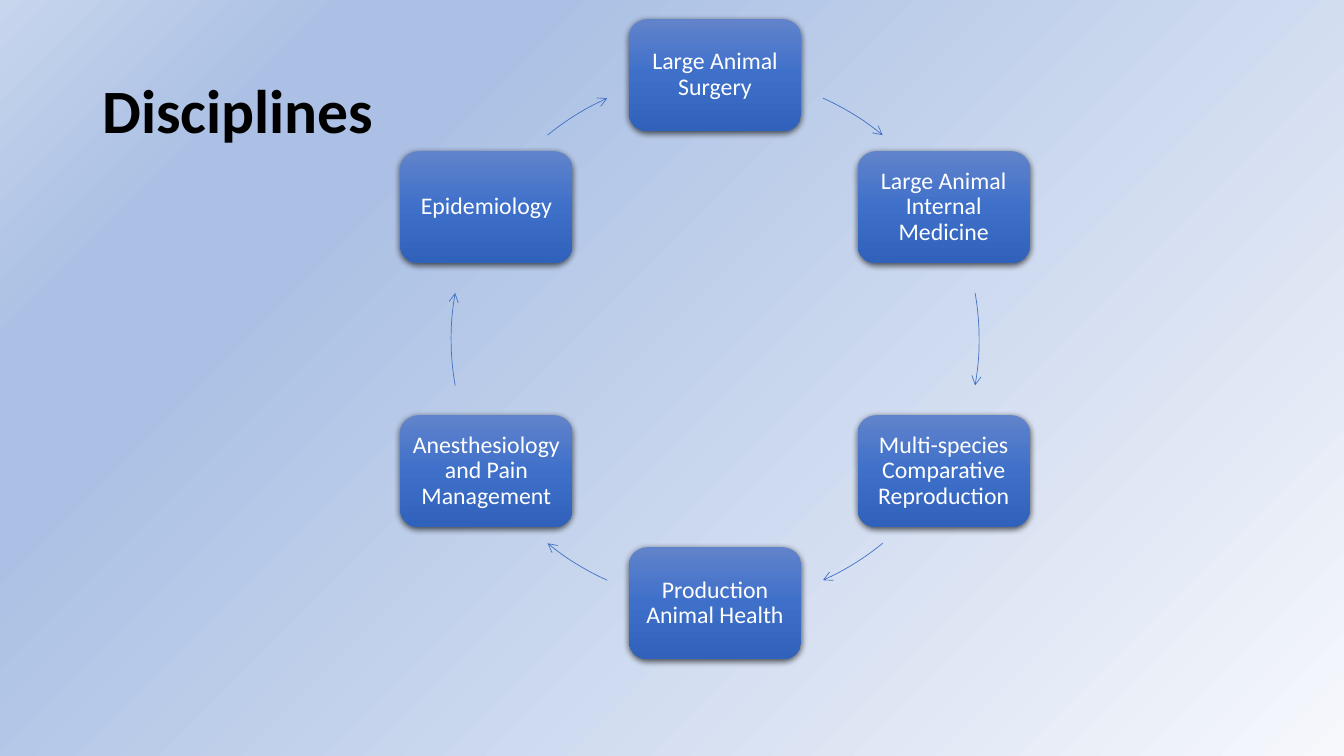
"""Builds the Disciplines slide: six disciplines linked in a clockwise cycle."""
from math import cos, radians, sin

from lxml import etree
from pptx import Presentation
from pptx.dml.color import RGBColor
from pptx.enum.shapes import MSO_SHAPE
from pptx.enum.text import MSO_ANCHOR, PP_ALIGN
from pptx.oxml import parse_xml
from pptx.oxml.ns import nsdecls, qn
from pptx.util import Pt

ROUNDED, ARC = MSO_SHAPE.ROUNDED_RECTANGLE, MSO_SHAPE.ARC
MIDDLE, LEFT, CENTER = MSO_ANCHOR.MIDDLE, PP_ALIGN.LEFT, PP_ALIGN.CENTER

COLORS = {
    "pale": "F6F8FC", "sky": "ABC0E4", "mist": "C7D5ED",
    "top": "6183CB", "mid": "3E70CA", "base": "3062BB",
    "arrow": "4472C4", "black": "000000", "white": "FFFFFF",
}
TITLE = {"size": Pt(44), "bold": True, "name": "Calibri"}
LABEL = {"size": Pt(17), "bold": False, "name": "Calibri"}

CX, CY, RADIUS = 510.8, 242.3, 188.6
BOX_W, BOX_H = 123.2, 80
CYCLE = [
    ("Large Animal Surgery", 294.1, 309.4),
    ("Large Animal Internal Medicine", 349.9, 10.1),
    ("Multi-species Comparative Reproduction", 50.6, 65.9),
    ("Production Animal Health", 114.1, 129.4),
    ("Anesthesiology and Pain Management", 169.9, 190.1),
    ("Epidemiology", 230.6, 245.9),
]


def gradient(stops, direction):
    """Return a gradient fill with (percent, colour name) stops."""
    gs = "".join(
        f'<a:gs pos="{pos * 1000}"><a:srgbClr val="{COLORS[name]}"/></a:gs>'
        for pos, name in stops)
    return parse_xml(f'<a:gradFill {nsdecls("a")} rotWithShape="1">'
                     f'<a:gsLst>{gs}</a:gsLst>{direction}</a:gradFill>')


def write(sp, text, style, color, align):
    """Put one middle-anchored paragraph into a shape."""
    tf = sp.text_frame
    tf.word_wrap = True
    tf.vertical_anchor = MIDDLE
    p = tf.paragraphs[0]
    p.alignment = align
    p.line_spacing = 0.9
    r = p.add_run()
    r.text = text
    for key, value in style.items():
        setattr(r.font, key, value)
    r.font.color.rgb = RGBColor.from_string(COLORS[color])
    return tf


prs = Presentation()
prs.slide_width, prs.slide_height = Pt(960), Pt(540)
s = prs.slides.add_slide(prs.slide_layouts[6])

bg = parse_xml(f'<p:bg {nsdecls("p", "a")}><p:bgPr><a:effectLst/></p:bgPr></p:bg>')
bg[0].insert(0, gradient(
    [(0, "pale"), (74, "sky"), (83, "sky"), (100, "mist")],
    '<a:path path="circle"><a:fillToRect l="100000" t="100000"/></a:path>'
    '<a:tileRect r="-100000" b="-100000"/>'))
s.element.cSld.insert(0, bg)

title = s.shapes.add_textbox(Pt(66), Pt(28.8), Pt(828), Pt(104.4))
write(title, "Disciplines", TITLE, "black", LEFT)

for i, (name, start, end) in enumerate(CYCLE):
    angle = radians(60 * i - 90)
    x, y = CX + RADIUS * cos(angle), CY + RADIUS * sin(angle)
    box = s.shapes.add_shape(ROUNDED, Pt(x - BOX_W / 2), Pt(y - BOX_H / 2),
                             Pt(BOX_W), Pt(BOX_H))
    box.line.fill.background()
    box.shadow.inherit = False
    spPr = box.element.spPr
    spPr.insert(2, gradient([(0, "top"), (50, "mid"), (100, "base")],
                            '<a:lin ang="5400000" scaled="0"/>'))
    spPr.find(qn("a:effectLst")).append(parse_xml(
        f'<a:outerShdw {nsdecls("a")} blurRad="{Pt(4.5)}" dist="{Pt(1.5)}" '
        f'dir="5400000" algn="ctr" rotWithShape="0"><a:srgbClr val="{COLORS["black"]}">'
        '<a:alpha val="63000"/></a:srgbClr></a:outerShdw>'))
    tf = write(box, name, LABEL, "white", CENTER)
    for side in ("left", "right", "top", "bottom"):
        setattr(tf, f"margin_{side}", Pt(4.8))

    arc = s.shapes.add_shape(ARC, Pt(CX - RADIUS), Pt(CY - RADIUS),
                             Pt(2 * RADIUS), Pt(2 * RADIUS))
    arc.adjustments[0], arc.adjustments[1] = start * 0.6, end * 0.6
    arc.fill.background()
    arc.shadow.inherit = False
    arc.line.width = Pt(0.5)
    arc.line.color.rgb = RGBColor.from_string(COLORS["arrow"])
    ln = arc.element.spPr.find(qn("a:ln"))
    etree.SubElement(ln, qn("a:tailEnd"), type="arrow")

prs.save("out.pptx")
